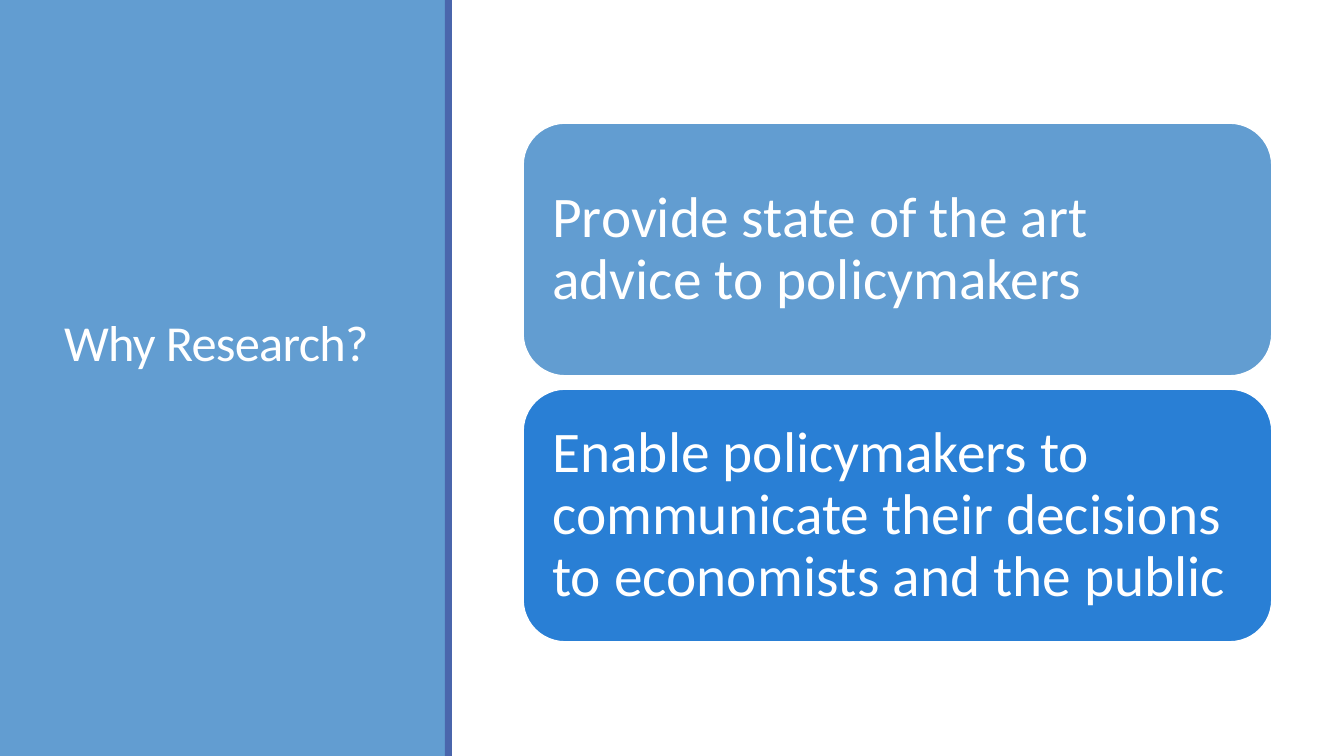
from pptx import Presentation
from pptx import util as u
from pptx.dml.color import RGBColor
from pptx.enum import shapes, text

WHITE = RGBColor(0xFF, 0xFF, 0xFF)
SKY = RGBColor(0x62, 0x9D, 0xD1)
INDIGO = RGBColor(0x4A, 0x66, 0xAC)
BLUE = RGBColor(0x29, 0x7F, 0xD5)


def px(length):
    return u.Emu(round(length * 914400 / 100.8))


def write(box, words, size, line_spacing, insets, tracking=0):
    frame = box.text_frame
    frame.word_wrap = True
    frame.vertical_anchor = text.MSO_ANCHOR.MIDDLE
    frame.margin_left, frame.margin_top, frame.margin_right, frame.margin_bottom = map(px, insets)
    para = frame.paragraphs[0]
    para.alignment = text.PP_ALIGN.LEFT
    para.line_spacing = line_spacing
    span = para.add_run()
    span.text = words
    span.font.name = "Calibri"
    span.font.size = u.Pt(size)
    span.font.color.rgb = WHITE
    if tracking:
        span.font._element.set("spc", str(tracking))


deck = Presentation()
deck.slide_width = px(1344)
deck.slide_height = px(756)
page = deck.slides.add_slide(deck.slide_layouts[6])

for left, width, color in [(0, 446, SKY), (445, 7, INDIGO)]:
    panel = page.shapes.add_shape(shapes.MSO_SHAPE.RECTANGLE, px(left), 0, px(width), px(756))
    panel.shadow.inherit = False
    panel.fill.solid()
    panel.fill.fore_color.rgb = color
    panel.line.fill.background()

title = page.shapes.add_textbox(px(54), px(57), px(340), px(636))
write(title, "Why Research?", 36, 0.85, (10, 5, 10, 62), tracking=-50)

reasons = [
    ("Provide state of the art advice to policymakers", SKY),
    ("Enable policymakers to communicate their decisions to economists and the public", BLUE),
]
for row, (words, color) in enumerate(reasons):
    card = page.shapes.add_shape(
        shapes.MSO_SHAPE.ROUNDED_RECTANGLE, px(523), px(123 + row * 266), px(749), px(253))
    card.shadow.inherit = False
    card.fill.solid()
    card.fill.fore_color.rgb = color
    card.line.color.rgb = WHITE
    card.line.width = u.Pt(1.25)
    write(card, words, 41, 0.9, (17, 17, 17, 17))

deck.save("out.pptx")
